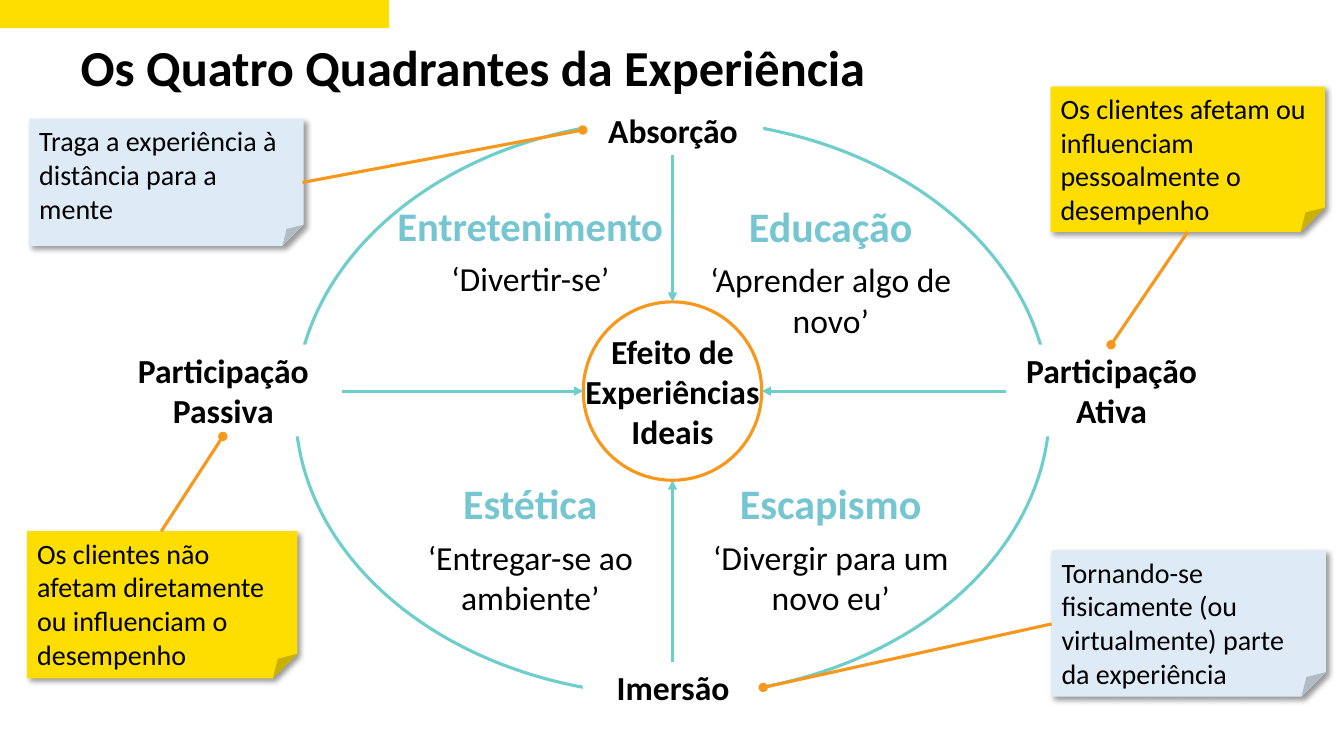
from lxml import etree
from pptx import Presentation
from pptx.dml.color import RGBColor
from pptx.enum.shapes import MSO_CONNECTOR as LINE, MSO_SHAPE as SHAPE
from pptx.enum.text import MSO_ANCHOR as ANCHOR, PP_ALIGN as ALIGN
from pptx.oxml.ns import qn
from pptx.util import Inches, Pt

FONT = "Calibri"
BLACK = RGBColor(0x00, 0x00, 0x00)
WHITE = RGBColor(0xFF, 0xFF, 0xFF)
YELLOW = RGBColor(0xFD, 0xDE, 0x00)
PALE_BLUE = RGBColor(0xDE, 0xEB, 0xF7)
TEAL = RGBColor(0x6E, 0xCE, 0xCB)
SKY = RGBColor(0x76, 0xC6, 0xD2)
ORANGE = RGBColor(0xF7, 0x98, 0x1D)

# Diagram grid: everything is laid out around one centre
W, H = 13.33, 7.5
CX, CY = 6.67, 3.88
RADIUS = 0.885
LEFT_COL, RIGHT_COL = (3.82, 2.88), (6.7, 3.08)
TOP_ROW, BOTTOM_ROW = (1.94, 1.5), (4.69, 1.5)


def add_run(p, text, size, color=BLACK, bold=False):
    r = p.add_run()
    r.text = text
    r.font.name, r.font.size, r.font.bold = FONT, Pt(size), bold
    r.font.color.rgb = color


def add_shape(s, kind, box, fill=None, line=None):
    sp = s.shapes.add_shape(kind, *map(Inches, box))
    sp.shadow.inherit = False
    if fill is None:
        sp.fill.background()
    else:
        sp.fill.solid()
        sp.fill.fore_color.rgb = fill
    if line is None:
        sp.line.fill.background()
    else:
        sp.line.color.rgb = line
        sp.line.width = Pt(2.25)
    return sp


def add_line(s, start, end, color, tail):
    cn = s.shapes.add_connector(LINE.STRAIGHT, *map(Inches, (*start, *end)))
    cn.line.color.rgb = color
    cn.line.width = Pt(2.25)
    sp_pr = cn.element.spPr
    etree.SubElement(sp_pr.find(qn("a:ln")), qn("a:tailEnd"), type=tail)
    etree.SubElement(sp_pr, qn("a:effectLst"))


def add_centre(s, lines):
    sp = add_shape(s, SHAPE.OVAL, (CX - RADIUS, CY - RADIUS, 2 * RADIUS, 2 * RADIUS),
                   line=ORANGE)
    tf = sp.text_frame
    tf.word_wrap = False
    tf.vertical_anchor = ANCHOR.MIDDLE
    tf.margin_left = tf.margin_right = tf.margin_top = tf.margin_bottom = 0
    for i, text in enumerate(lines):
        p = tf.add_paragraph() if i else tf.paragraphs[0]
        p.alignment = ALIGN.CENTER
        add_run(p, text, 24, bold=True)


def add_pole(s, text, box):
    """White label that interrupts the big ellipse."""
    tf = add_shape(s, SHAPE.RECTANGLE, box, fill=WHITE).text_frame
    tf.word_wrap = True
    tf.vertical_anchor = ANCHOR.TOP
    p = tf.paragraphs[0]
    p.alignment = ALIGN.CENTER
    add_run(p, text, 24, bold=True)


def add_quadrant(s, col, row, name, size, motto):
    (left, width), (top, height) = col, row
    tf = s.shapes.add_textbox(*map(Inches, (left, top, width, height))).text_frame
    tf.word_wrap = True
    head, body = tf.paragraphs[0], tf.add_paragraph()
    for p in (head, body):
        p.alignment = ALIGN.CENTER
        p.space_after = Pt(6)
    add_run(head, name, size, SKY, bold=True)
    add_run(body, motto, 24)


def add_note(s, text, box, fill):
    sp = add_shape(s, SHAPE.FOLDED_CORNER, box, fill=fill)
    effects = sp.element.spPr.find(qn("a:effectLst"))
    shadow = etree.SubElement(effects, qn("a:outerShdw"), blurRad=str(Pt(4)),
                              dist=str(Pt(3)), dir=str(45 * 60000),
                              algn="tl", rotWithShape="0")
    black = etree.SubElement(shadow, qn("a:srgbClr"), val=str(BLACK))
    etree.SubElement(black, qn("a:alpha"), val="40000")
    tf = sp.text_frame
    tf.word_wrap = True
    tf.vertical_anchor = ANCHOR.TOP
    p = tf.paragraphs[0]
    p.alignment = ALIGN.LEFT
    add_run(p, text, 20)


def add_title(s, text):
    sp = s.shapes.title
    sp.left, sp.top, sp.width, sp.height = map(Inches, (0.7, 0.38, 8.12, 0.76))
    tf = sp.text_frame
    tf.word_wrap = True
    tf.vertical_anchor = ANCHOR.TOP
    p = tf.paragraphs[0]
    p.alignment = ALIGN.LEFT
    p.line_spacing = 0.9
    add_run(p, text, 36, bold=True)


def main():
    prs = Presentation()
    prs.slide_width, prs.slide_height = Inches(W), Inches(H)
    s = prs.slides.add_slide(prs.slide_layouts[5])

    # Header
    add_shape(s, SHAPE.RECTANGLE, (0, 0, 3.86, 0.28), fill=YELLOW)
    add_title(s, "Os Quatro Quadrantes da Experiência")

    # Ellipse and centre
    add_shape(s, SHAPE.OVAL, (CX - 3.74, 1.19, 7.48, 5.71), line=TEAL)
    add_centre(s, ("Efeito de", "Experiências", "Ideais"))

    # Poles, each with an arrow towards the centre: direction, label box
    poles = (
        ("Absorção", (0, -1), (5.78, 1.04, 1.79, 0.5)),
        ("Imersão", (0, 1), (5.78, 6.57, 1.79, 0.5)),
        ("Participação Passiva", (-1, 0), (1.04, 3.42, 2.35, 0.91)),
        ("Participação Ativa", (1, 0), (9.98, 3.42, 2.09, 0.91)),
    )
    for text, (dx, dy), box in poles:
        left, top, width, height = box
        add_pole(s, text, box)
        start = (CX if dx == 0 else left + width * (dx < 0),
                 CY if dy == 0 else top + height * (dy < 0))
        add_line(s, start, (CX + dx * RADIUS, CY + dy * RADIUS), TEAL, "triangle")

    # Quadrants
    add_quadrant(s, LEFT_COL, TOP_ROW, "Entretenimento", 29, "‘Divertir-se’")
    add_quadrant(s, LEFT_COL, BOTTOM_ROW, "Estética", 30, "‘Entregar-se ao ambiente’")
    add_quadrant(s, RIGHT_COL, TOP_ROW, "Educação", 30, "‘Aprender algo de novo’")
    add_quadrant(s, RIGHT_COL, BOTTOM_ROW, "Escapismo", 30, "‘Divergir para um novo eu’")

    # Notes, each with a pointer to its pole
    notes = (
        ("Os clientes não afetam diretamente ou influenciam o desempenho",
         (0.27, 5.27, 2.68, 1.46), YELLOW, (1.6, 5.27), (2.21, 4.33)),
        ("Traga a experiência à distância para a mente",
         (0.29, 1.18, 2.72, 1.26), PALE_BLUE, (3, 1.81), (5.78, 1.29)),
        ("Os clientes afetam ou influenciam pessoalmente o desempenho",
         (10.42, 0.86, 2.72, 1.44), YELLOW, (11.78, 2.3), (11.02, 3.42)),
        ("Tornando-se fisicamente (ou virtualmente) parte da experiência",
         (10.43, 5.46, 2.72, 1.45), PALE_BLUE, (10.43, 6.19), (7.57, 6.82)),
    )
    for text, box, fill, start, end in notes:
        add_note(s, text, box, fill)
        add_line(s, start, end, ORANGE, "oval")

    prs.save("out.pptx")


if __name__ == "__main__":
    main()
